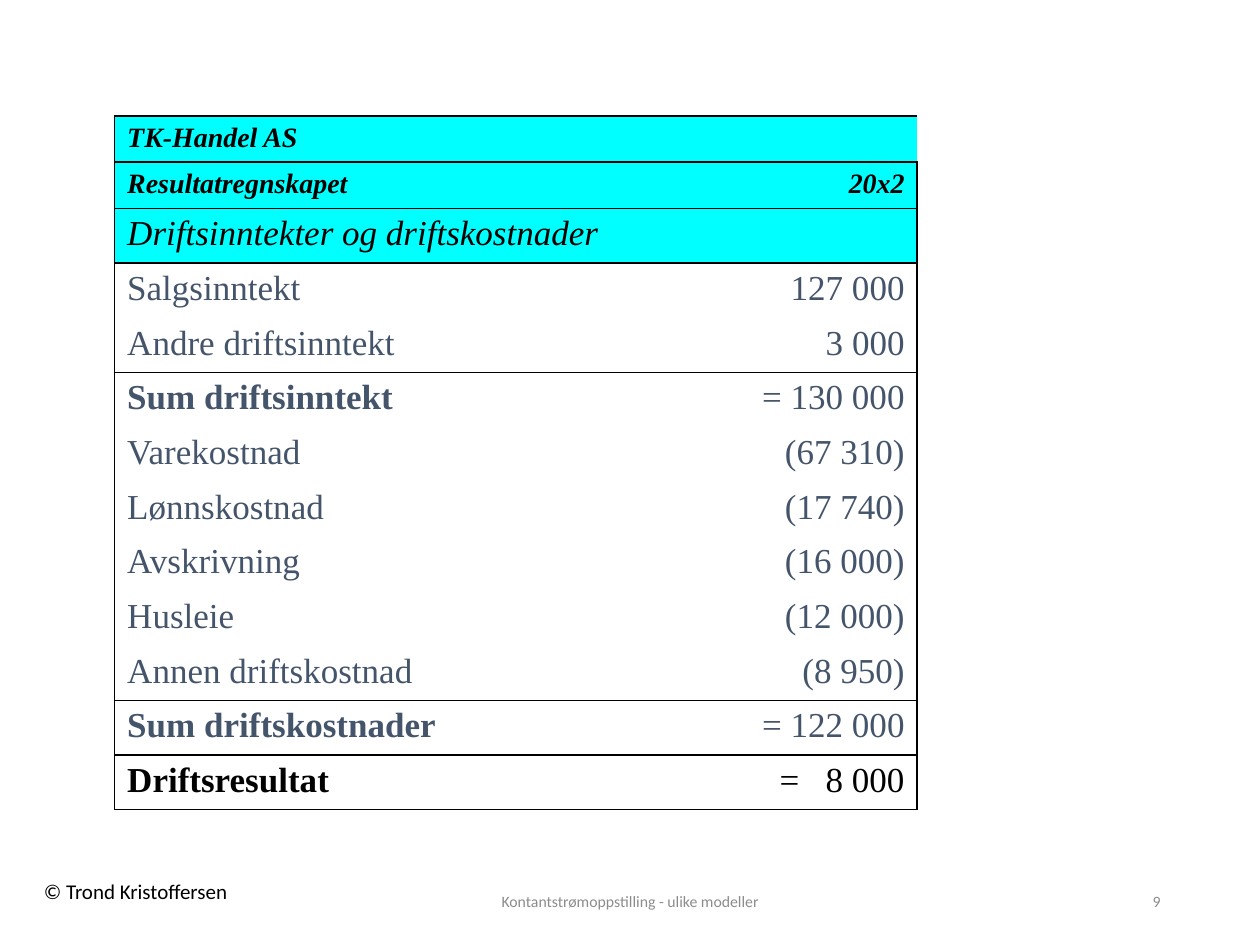
from lxml import etree
from pptx import Presentation
from pptx.dml.color import RGBColor
from pptx.enum import text
from pptx.oxml import ns
from pptx.util import Inches, Pt

BLACK = RGBColor(0x00, 0x00, 0x00)
SLATE = RGBColor(0x44, 0x54, 0x6A)
GREY = RGBColor(0x8C, 0x8C, 0x8C)
CYAN = RGBColor(0x00, 0xFF, 0xFF)
LEFT, CENTER, RIGHT = text.PP_ALIGN.LEFT, text.PP_ALIGN.CENTER, text.PP_ALIGN.RIGHT

# Font formats of the row kinds: label column, amount column
HEADING = dict(size=Pt(16), bold=True, italic=True, color=BLACK)
SECTION = dict(size=Pt(20), bold=False, italic=True, color=BLACK)
ITEM = dict(size=Pt(20), bold=False, italic=False, color=SLATE)
SUM = dict(ITEM, bold=True)
RESULT = dict(ITEM, color=BLACK)
RESULT_LABEL = dict(RESULT, bold=True)

# Label, amount, label format, amount format, line above the row
ROWS = [
    ("TK-Handel AS", "", HEADING, HEADING, True),
    ("Resultatregnskapet", "20x2", HEADING, HEADING, True),
    ("Driftsinntekter og driftskostnader", "", SECTION, SECTION, True),
    ("Salgsinntekt", "127 000", ITEM, ITEM, True),
    ("Andre driftsinntekt", "3 000", ITEM, ITEM, False),
    ("Sum driftsinntekt", "= 130 000", SUM, ITEM, True),
    ("Varekostnad", "(67 310)", ITEM, ITEM, False),
    ("Lønnskostnad", "(17 740)", ITEM, ITEM, False),
    ("Avskrivning", "(16 000)", ITEM, ITEM, False),
    ("Husleie", "(12 000)", ITEM, ITEM, False),
    ("Annen driftskostnad", "(8 950)", ITEM, ITEM, False),
    ("Sum driftskostnader", "= 122 000", SUM, ITEM, True),
    ("Driftsresultat", "=   8 000", RESULT_LABEL, RESULT, True),
]
SHADED_ROWS = 3
HEADING_ROWS = 2


def write(tf, words, font, align, **fmt):
    p = tf.paragraphs[0]
    p.alignment = align
    r = p.add_run()
    r.text = words
    r.font.name = font
    for name, value in fmt.items():
        if name == "color":
            r.font.color.rgb = value
        else:
            setattr(r.font, name, value)
    return p


def set_borders(cell, sides):
    """Draw black lines on the given sides and none on the others."""
    tc_pr = cell._tc.get_or_add_tcPr()
    for i, side in enumerate("LRTB"):
        ln = etree.Element(ns.qn(f"a:ln{side}"), w=str(Pt(1)))
        if side in sides:
            fill = etree.SubElement(ln, ns.qn("a:solidFill"))
            etree.SubElement(fill, ns.qn("a:srgbClr"), val=str(BLACK))
        else:
            etree.SubElement(ln, ns.qn("a:noFill"))
        tc_pr.insert(i, ln)


def add_income_statement(s, left, top, width, height):
    table = s.shapes.add_table(len(ROWS), 2, left, top, width, height).table
    table.first_row = table.horz_banding = False
    amount_width = Inches(1.37)
    table.columns[0].width = width - amount_width
    table.columns[1].width = amount_width

    heading_height = Inches(0.73) // HEADING_ROWS
    body_height = (height - Inches(0.73)) // (len(ROWS) - HEADING_ROWS)
    lines = [row[-1] for row in ROWS] + [True]
    for i, (label, amount, label_fmt, amount_fmt, _) in enumerate(ROWS):
        table.rows[i].height = heading_height if i < HEADING_ROWS else body_height
        parts = [(label, label_fmt, LEFT, "L"), (amount, amount_fmt, RIGHT, "R")]
        for j, (words, fmt, align, outer) in enumerate(parts):
            cell = table.cell(i, j)
            if i < SHADED_ROWS:
                cell.fill.solid()
                cell.fill.fore_color.rgb = CYAN
            else:
                cell.fill.background()
            set_borders(cell, outer + "T" * lines[i] + "B" * lines[i + 1])
            if words:
                p = write(cell.text_frame, words, "Times New Roman", align, **fmt)
                p.space_before = Pt(1)
    table.cell(0, 0).merge(table.cell(0, 1))


def add_note(s, box, words, align, size, color, anchor, wrap=True):
    tf = s.shapes.add_textbox(*box).text_frame
    tf.word_wrap = wrap
    tf.vertical_anchor = anchor
    write(tf, words, "Calibri", align, size=size, color=color)


def add_footer(s, left, top, width, height):
    middle, upper = text.MSO_ANCHOR.MIDDLE, text.MSO_ANCHOR.TOP
    center_width, number_width = Inches(3.38), Inches(2.25)
    # Copyright
    add_note(s, (Inches(0.25), top - Inches(0.03), Inches(1.7), Inches(0.3)),
             "© Trond Kristoffersen", LEFT, Pt(12), BLACK, upper, wrap=False)
    # Centred footer
    add_note(s, (left + (width - center_width) // 2, top, center_width, height),
             "Kontantstrømoppstilling - ulike modeller", CENTER, Pt(9), GREY, middle)
    # Slide number
    add_note(s, (left + width - number_width, top, number_width, height),
             "9", RIGHT, Pt(9), GREY, middle)


def main():
    prs = Presentation()
    prs.slide_width, prs.slide_height = Inches(10), Inches(7.5)
    s = prs.slides.add_slide(prs.slide_layouts[6])
    add_footer(s, Inches(0.69), Inches(6.95), Inches(8.62), Inches(0.4))
    add_income_statement(s, Inches(0.91), Inches(0.92), Inches(6.37), Inches(5.5))
    prs.save("out.pptx")


if __name__ == "__main__":
    main()
